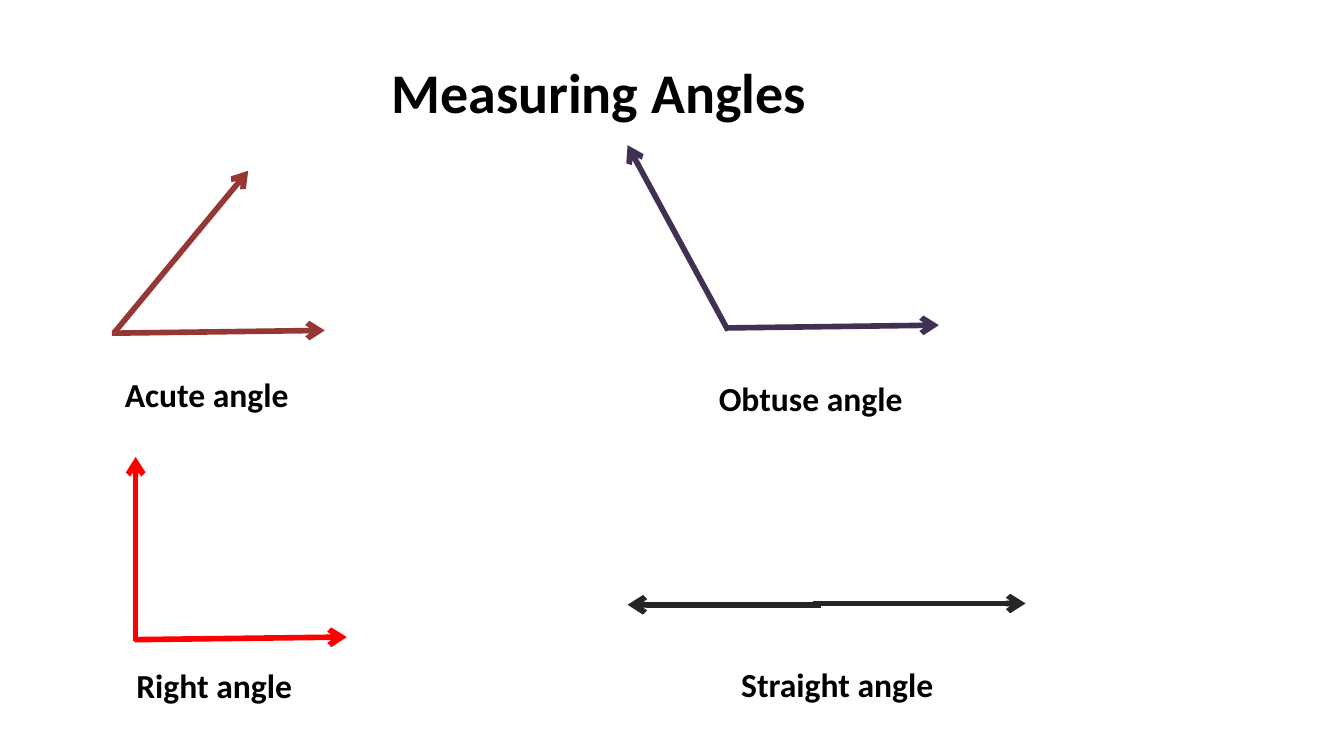
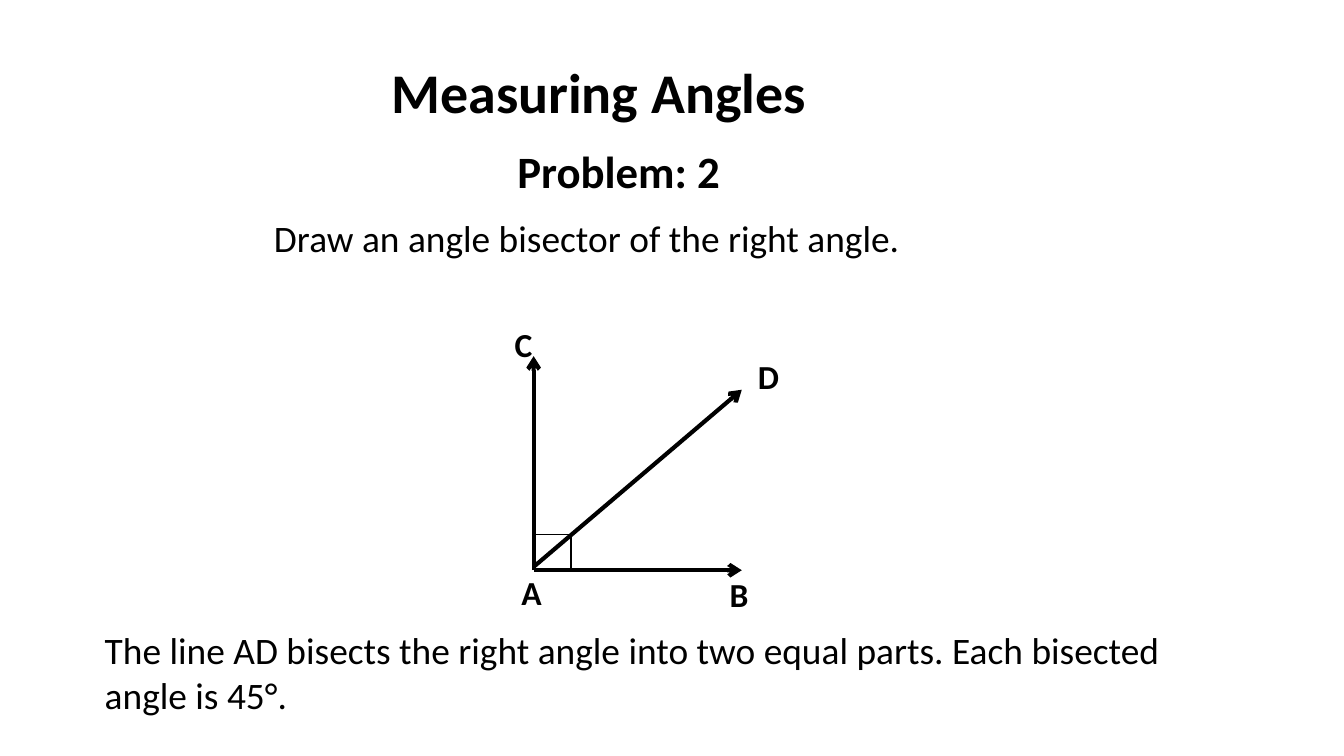
from dataclasses import dataclass

from lxml import etree
from pptx import Presentation
from pptx.dml.color import RGBColor
from pptx.enum.shapes import MSO_CONNECTOR
from pptx.enum.text import MSO_ANCHOR, MSO_AUTO_SIZE, PP_ALIGN
from pptx.oxml.ns import qn
from pptx.util import Pt

STRAIGHT = MSO_CONNECTOR.STRAIGHT
MIDDLE = MSO_ANCHOR.MIDDLE
GROW = MSO_AUTO_SIZE.SHAPE_TO_FIT_TEXT
NO_FIT = MSO_AUTO_SIZE.NONE
CENTER = PP_ALIGN.CENTER
TITLE_ONLY = 5


@dataclass(frozen=True)
class Theme:
    font: str = "Calibri"
    black: RGBColor = RGBColor(0, 0, 0)
    acute: RGBColor = RGBColor(0x95, 0x37, 0x35)
    obtuse: RGBColor = RGBColor(0x40, 0x31, 0x52)
    right: RGBColor = RGBColor(0xFF, 0, 0)
    straight: RGBColor = RGBColor(0x26, 0x26, 0x26)
    title_size: float = 30
    heading_size: float = 24
    body_size: float = 20
    label_size: float = 18
    thick: float = 3
    medium: float = 2.25
    thin: float = 0.75


class Deck:
    def __init__(self, theme):
        self.theme = theme
        self.presentation = Presentation()
        self.presentation.slide_width = Pt(720)
        self.presentation.slide_height = Pt(405)
        self.slide = None

    def add_slide(self, title):
        layout = self.presentation.slide_layouts[TITLE_ONLY]
        self.slide = self.presentation.slides.add_slide(layout)
        shape = self.slide.shapes.title
        shape.left, shape.top = Pt(59.8), Pt(10.8)
        shape.width, shape.height = Pt(522), Pt(76.3)
        frame = shape.text_frame
        frame.text = title
        frame.vertical_anchor = MIDDLE
        frame.auto_size = NO_FIT
        frame.paragraphs[0].alignment = CENTER
        self.format_font(frame.paragraphs[0], self.theme.title_size, True)

    def format_font(self, paragraph, size, bold):
        font = paragraph.font
        font.name = self.theme.font
        font.size = Pt(size)
        font.bold = bold
        font.color.rgb = self.theme.black

    def add_text(self, text, left, top, width, height, size, bold=False, indent=0):
        shape = self.slide.shapes.add_textbox(Pt(left), Pt(top), Pt(width), Pt(height))
        frame = shape.text_frame
        frame.word_wrap = True
        frame.auto_size = GROW
        frame.margin_left = Pt(7.2 + indent)
        frame.text = text
        self.format_font(frame.paragraphs[0], size, bold)

    def add_label(self, text, left, top, width):
        self.add_text(text, left, top, width, 29, self.theme.label_size, bold=True)

    def add_line(self, start, end, color, weight, arrow=False):
        points = [Pt(value) for value in (*start, *end)]
        connector = self.slide.shapes.add_connector(STRAIGHT, *points)
        connector.line.color.rgb = color
        connector.line.width = Pt(weight)
        properties = connector.element.spPr
        if arrow:
            line = properties.find(qn("a:ln"))
            etree.SubElement(line, qn("a:tailEnd"), type="arrow")
        etree.SubElement(properties, qn("a:effectLst"))


def build_angle_types(deck):
    theme = deck.theme
    deck.add_slide("Measuring Angles")
    angles = [
        ("Acute angle", (59.8, 196.6), theme.acute,
         [((61, 178.5), (133, 91.5)), ((60, 178.5), (174, 177))]),
        ("Obtuse angle", (378, 198.7), theme.obtuse,
         [((390, 177), (336.2, 77.8)), ((389, 175.7), (503, 174.2))]),
        ("Right angle", (66, 352.8), theme.right,
         [((72.7, 343.4), (72.7, 244.8)), ((72, 342.7), (185.8, 341.3))]),
        ("Straight angle", (390, 352), theme.straight,
         [((435.6, 323.3), (549.4, 323.3)), ((440, 324), (336.2, 324))]),
    ]
    for name, (left, top), color, rays in angles:
        for start, end in rays:
            deck.add_line(start, end, color, theme.thick, arrow=True)
        deck.add_label(name, left, top, 150)


def build_bisector_problem(deck):
    theme = deck.theme
    deck.add_slide("Measuring Angles")
    deck.add_text("Problem: 2", 126, 73.4, 421, 36, theme.heading_size,
                  bold=True, indent=144)
    deck.add_text("Draw an angle bisector of the right angle.",
                  139.7, 111.6, 361.5, 31.7, theme.body_size)

    corner_x, corner_y = 285.9, 305.5
    rays = [
        ((corner_x, corner_y), (corner_x, 190.8)),
        ((corner_x, corner_y), (397.4, corner_y)),
        ((286.6, 303.1), (397.4, 208.8)),
    ]
    for start, end in rays:
        deck.add_line(start, end, theme.black, theme.medium, arrow=True)

    mark_x, mark_y = corner_x + 20, corner_y - 19
    deck.add_line((corner_x, mark_y), (mark_x, mark_y), theme.black, theme.thin)
    deck.add_line((mark_x, mark_y), (mark_x, corner_y), theme.black, theme.thin)

    points = [("A", 272.2, 303.1), ("B", 383.8, 303.8),
              ("D", 398.9, 187.2), ("C", 268.6, 169.9)]
    for name, left, top in points:
        deck.add_label(name, left, top, 27.4)

    deck.add_text("The line AD bisects the right angle into two equal parts. "
                  "Each bisected angle is 45°.",
                  49, 332.6, 605.5, 55.4, theme.body_size)


def main():
    deck = Deck(Theme())
    build_angle_types(deck)
    build_bisector_problem(deck)
    deck.presentation.save("out.pptx")


if __name__ == "__main__":
    main()
